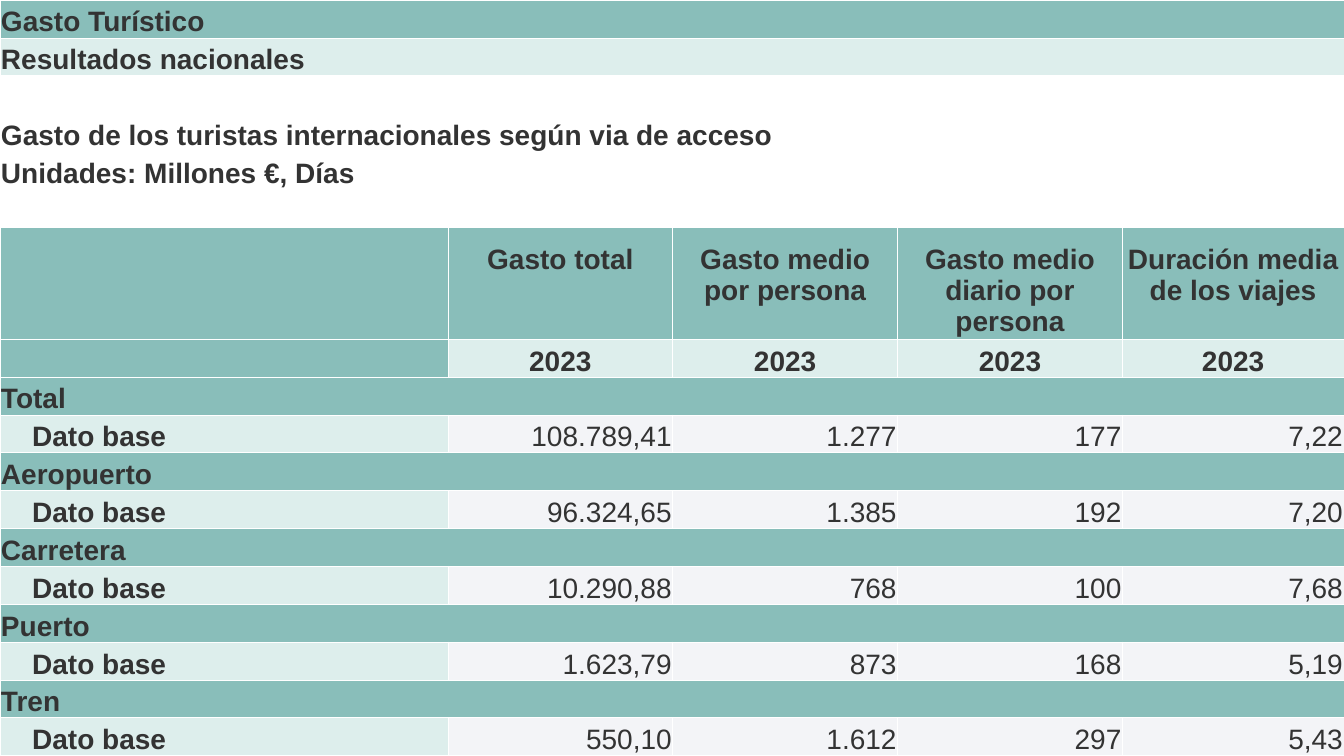
from dataclasses import dataclass

from lxml import etree
from pptx import Presentation
from pptx.dml.color import RGBColor
from pptx.enum.text import MSO_ANCHOR, PP_ALIGN
from pptx.oxml.ns import qn
from pptx.util import Pt

LEFT, CENTER, RIGHT = PP_ALIGN.LEFT, PP_ALIGN.CENTER, PP_ALIGN.RIGHT
TOP, BOTTOM = MSO_ANCHOR.TOP, MSO_ANCHOR.BOTTOM


@dataclass(frozen=True)
class Theme:
    font: str = "Arial"
    size: float = 20
    text: str = "333333"
    band: str = "89BEBA"
    label: str = "DDEEEC"
    value: str = "F3F4F7"
    white: str = "FFFFFF"
    border: float = 0.5
    inset: float = 0.72
    indent: float = 22.24


THEME = Theme()
SLIDE_W, SLIDE_H = 960, 540
LABEL_W, VALUE_W = 320, 160.6
HEADER_H, HEADER_PAD = 80, 12

# Full-width rows above the column headings: text and fill
HEADING = [
    ("Gasto Turístico", THEME.band),
    ("Resultados nacionales", THEME.label),
    ("", THEME.white),
    ("Gasto de los turistas internacionales según via de acceso", THEME.white),
    ("Unidades: Millones €, Días", THEME.white),
    ("", THEME.white),
]
MEASURES = ["Gasto total", "Gasto medio por persona",
            "Gasto medio diario por persona", "Duración media de los viajes"]
YEAR = "2023"
ACCESS = {
    "Total": ["108.789,41", "1.277", "177", "7,22"],
    "Aeropuerto": ["96.324,65", "1.385", "192", "7,20"],
    "Carretera": ["10.290,88", "768", "100", "7,68"],
    "Puerto": ["1.623,79", "873", "168", "5,19"],
    "Tren": ["550,10", "1.612", "297", "5,43"],
}


def add_borders(cell):
    tcPr = cell._tc.get_or_add_tcPr()
    for side in ("a:lnL", "a:lnR", "a:lnT", "a:lnB"):
        ln = etree.SubElement(tcPr, qn(side), w=str(Pt(THEME.border)))
        fill = etree.SubElement(ln, qn("a:solidFill"))
        etree.SubElement(fill, qn("a:srgbClr"), val=THEME.white)


def fill_cell(cell, text, fill, align=LEFT, bold=True, anchor=BOTTOM,
              top=THEME.inset, indent=0):
    add_borders(cell)
    cell.fill.solid()
    cell.fill.fore_color.rgb = RGBColor.from_string(fill)
    cell.margin_left = cell.margin_right = Pt(THEME.inset)
    cell.margin_top, cell.margin_bottom = Pt(top), 0
    cell.vertical_anchor = anchor
    p = cell.text_frame.paragraphs[0]
    p.text = text
    p.alignment = align
    if indent:
        p._p.get_or_add_pPr().set("marL", str(Pt(indent)))
    for font in [p.font] + [r.font for r in p.runs]:
        font.name, font.size, font.bold = THEME.font, Pt(THEME.size), bold
        font.color.rgb = RGBColor.from_string(THEME.text)


def fill_band(table, row, text, fill):
    """One row merged across all columns."""
    cells = list(table.rows[row].cells)
    for i, cell in enumerate(cells):
        fill_cell(cell, "" if i else text, fill)
    cells[0].merge(cells[-1])


def fill_column_heads(table, row):
    """The measure names and, below them, the year."""
    for i, measure in enumerate([""] + MEASURES):
        fill_cell(table.cell(row, i), measure, THEME.band, CENTER,
                  anchor=TOP, top=HEADER_PAD)
        fill_cell(table.cell(row + 1, i), YEAR if i else "",
                  THEME.label if i else THEME.band, CENTER)


def fill_access(table, row, name, values):
    """A way of access: its band and its line of values."""
    fill_band(table, row, name, THEME.band)
    fill_cell(table.cell(row + 1, 0), "Dato base", THEME.label,
              indent=THEME.indent)
    for i, value in enumerate(values, 1):
        fill_cell(table.cell(row + 1, i), value, THEME.value, RIGHT, bold=False)


def add_spending_table(s, x, y, w, h):
    head = len(HEADING)
    n_rows = head + 2 + 2 * len(ACCESS)
    n_cols = 1 + len(MEASURES)
    table = s.shapes.add_table(n_rows, n_cols, Pt(x), Pt(y), Pt(w), Pt(h)).table
    table.first_row = table.horz_banding = False

    # Grid: the last column takes what is left, plain rows share the height
    widths = [LABEL_W] + [VALUE_W] * (n_cols - 2)
    for col, width in zip(table.columns, widths + [w - sum(widths)]):
        col.width = Pt(width)
    for i, row in enumerate(table.rows):
        row.height = Pt(HEADER_H if i == head else (h - HEADER_H) / (n_rows - 1))

    # Contents
    for i, (text, fill) in enumerate(HEADING):
        fill_band(table, i, text, fill)
    fill_column_heads(table, head)
    for i, (name, values) in enumerate(ACCESS.items()):
        fill_access(table, head + 2 + 2 * i, name, values)


def main():
    prs = Presentation()
    prs.slide_width, prs.slide_height = Pt(SLIDE_W), Pt(SLIDE_H)
    s = prs.slides.add_slide(prs.slide_layouts[6])
    add_spending_table(s, 0, 0, SLIDE_W, SLIDE_H)
    prs.save("out.pptx")


if __name__ == "__main__":
    main()
